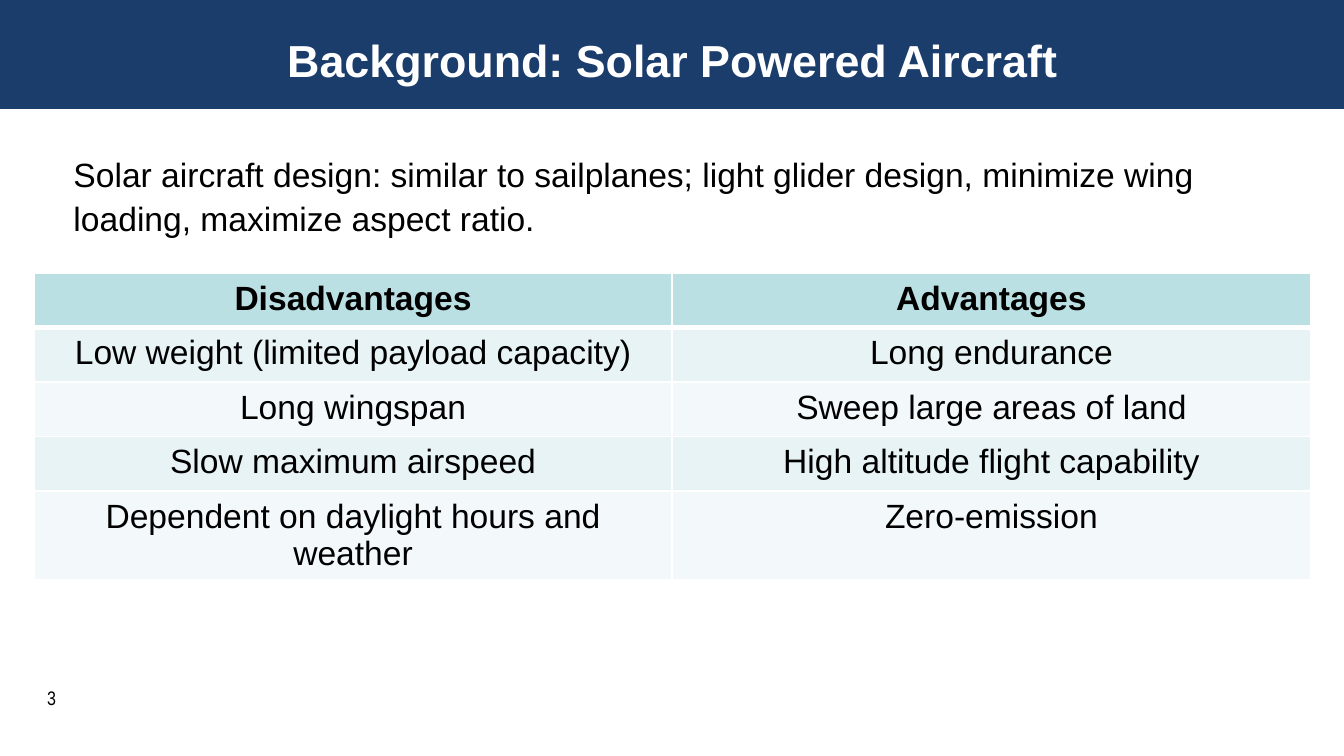
from dataclasses import dataclass

import lxml.etree
import pptx
import pptx.dml.color
import pptx.enum.shapes
import pptx.enum.text
import pptx.oxml.ns
import pptx.util

Cm = pptx.util.Cm
Pt = pptx.util.Pt
ALIGN = pptx.enum.text.PP_ALIGN
ANCHOR = pptx.enum.text.MSO_ANCHOR

COLORS = {
    "navy": "1B3D6C",
    "white": "FFFFFF",
    "black": "000000",
    "header": "BBE0E3",
    "odd": "E7F3F4",
    "even": "F3F9FA",
}

ROWS = [
    ("Disadvantages", "Advantages"),
    ("Low weight (limited payload capacity)", "Long endurance"),
    ("Long wingspan", "Sweep large areas of land"),
    ("Slow maximum airspeed", "High altitude flight capability"),
    ("Dependent on daylight hours and weather", "Zero-emission"),
]


@dataclass
class Label:
    text: str
    left: float
    top: float
    width: float
    height: float
    size: float = 18
    font: str = "Arial"
    color: str = "black"
    bold: bool = False
    align: ALIGN = ALIGN.LEFT
    anchor: ANCHOR = ANCHOR.TOP
    spacing: float = 1.0


LABELS = [
    Label("Background: Solar Powered Aircraft", 0.64, 0.41, 24.13, 1.42, size=24,
          color="white", bold=True, align=ALIGN.CENTER, anchor=ANCHOR.MIDDLE),
    Label("Solar aircraft design: similar to sailplanes; light glider design, "
          "minimize wing loading, maximize aspect ratio.",
          1.14, 2.74, 22.56, 1.8, spacing=1.07),
    Label("3", 0.64, 12.85, 2.54, 0.48, size=10.5, font="Arial Narrow"),
]


def rgb(name: str) -> pptx.dml.color.RGBColor:
    return pptx.dml.color.RGBColor.from_string(COLORS[name])


def write(tf, text: str, align: ALIGN, color: str, **formats) -> None:
    p = tf.paragraphs[0]
    p.alignment = align
    r = p.add_run()
    r.text = text
    r.font.color.rgb = rgb(color)
    for name, value in formats.items():
        setattr(r.font, name, value)


def draw_label(s, label: Label) -> None:
    box = s.shapes.add_textbox(Cm(label.left), Cm(label.top), Cm(label.width), Cm(label.height))
    tf = box.text_frame
    for name, value in {"word_wrap": True, "vertical_anchor": label.anchor}.items():
        setattr(tf, name, value)
    write(tf, label.text, label.align, label.color,
          size=Pt(label.size), name=label.font, bold=label.bold)
    tf.paragraphs[0].line_spacing = label.spacing


def draw_borders(cell, widths: dict[str, float]) -> None:
    qn = pptx.oxml.ns.qn
    tcPr = cell._tc.get_or_add_tcPr()
    for side, width in widths.items():
        ln = lxml.etree.SubElement(tcPr, qn(f"a:ln{side}"), w=str(Pt(width)))
        fill = lxml.etree.SubElement(ln, qn("a:solidFill"))
        lxml.etree.SubElement(fill, qn("a:srgbClr"), val=COLORS["white"])


def draw_table(s, rows: list[tuple[str, str]]) -> None:
    frame = s.shapes.add_table(len(rows), 2, Cm(0.64), Cm(5.16), Cm(24.13), Cm(1.03 * len(rows)))
    for i, row in enumerate(rows):
        fill = "header" if i == 0 else ("even", "odd")[i % 2]
        widths = {"L": 1, "R": 1, "T": 3 if i == 1 else 1, "B": 3 if i == 0 else 1}
        for j, text in enumerate(row):
            cell = frame.table.cell(i, j)
            draw_borders(cell, widths)
            cell.fill.solid()
            cell.fill.fore_color.rgb = rgb(fill)
            write(cell.text_frame, text, ALIGN.CENTER, "black",
                  size=Pt(18), name="Arial", bold=i == 0)


def draw_banner(s, width: int) -> None:
    sp = s.shapes.add_shape(pptx.enum.shapes.MSO_SHAPE.RECTANGLE, 0, 0, width, Cm(2.06))
    sp.shadow.inherit = False
    sp.fill.solid()
    sp.fill.fore_color.rgb = rgb("navy")
    sp.line.fill.background()


def main() -> None:
    prs = pptx.Presentation()
    prs.slide_width = Cm(25.4)
    prs.slide_height = Cm(14.29)
    s = prs.slides.add_slide(prs.slide_layouts[6])
    draw_banner(s, prs.slide_width)
    draw_table(s, ROWS)
    for label in LABELS:
        draw_label(s, label)
    prs.save("out.pptx")


if __name__ == "__main__":
    main()
